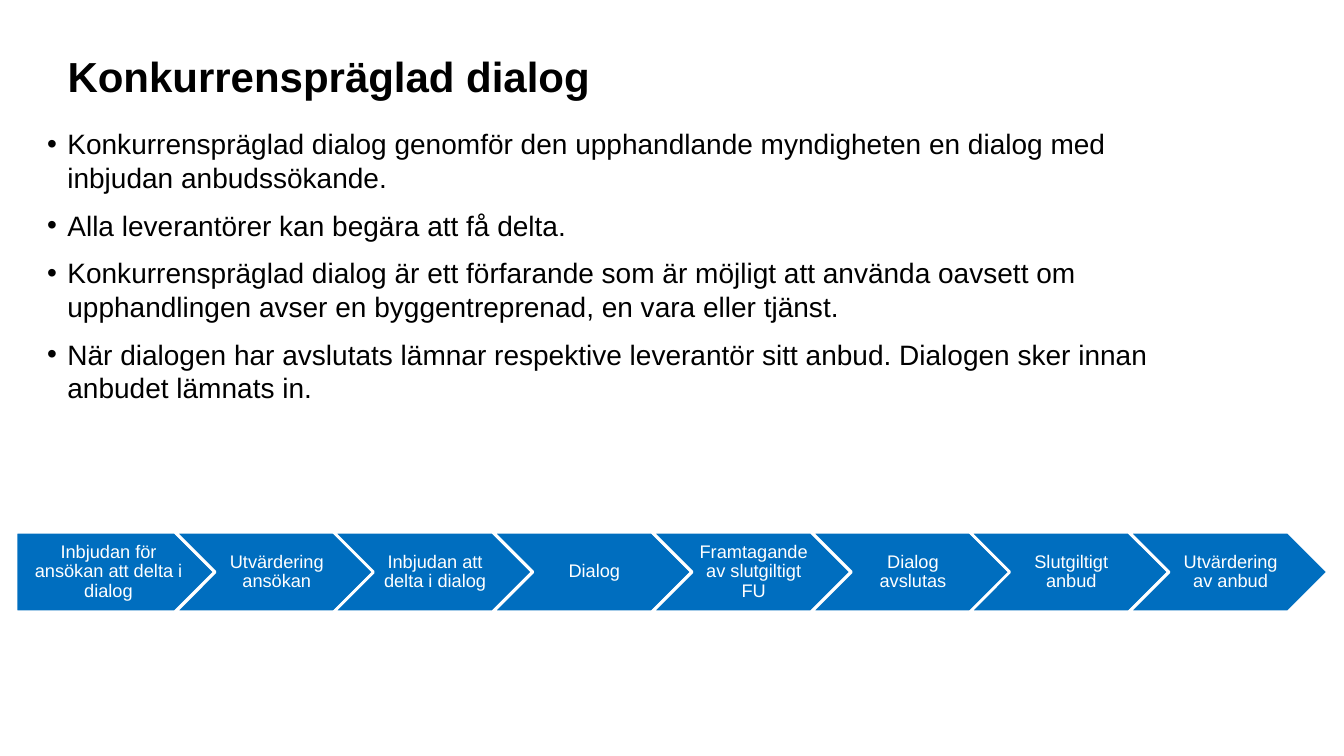
from lxml import etree
from pptx import Presentation
from pptx.dml.color import RGBColor
from pptx.enum.shapes import MSO_SHAPE
from pptx.enum.text import MSO_ANCHOR, PP_ALIGN
from pptx.oxml.ns import qn
from pptx.util import Emu, Pt

PX = 9144  # EMU per px, 100 px to the inch
FONT = "Arial"
COLORS = {"text": "000000", "step": "006EBF", "white": "FFFFFF"}

TITLE = "Konkurrenspräglad dialog"
BULLETS = [
    "Konkurrenspräglad dialog genomför den upphandlande myndigheten en dialog med inbjudan anbudssökande.",
    "Alla leverantörer kan begära att få delta.",
    "Konkurrenspräglad dialog är ett förfarande som är möjligt att använda oavsett om "
    "upphandlingen avser en byggentreprenad, en vara eller tjänst.",
    "När dialogen har avslutats lämnar respektive leverantör sitt anbud. "
    "Dialogen sker innan anbudet lämnats in.",
]
STEPS = [
    "Inbjudan för ansökan att delta i dialog",
    "Utvärdering ansökan",
    "Inbjudan att delta i dialog",
    "Dialog",
    "Framtagande av slutgiltigt FU",
    "Dialog avslutas",
    "Slutgiltigt anbud",
    "Utvärdering av anbud",
]
FIRST_LEFT, LAST_LEFT = 16, 1120
STEP_TOP, STEP_W, STEP_H = 528, 197, 79


def px(n):
    return Emu(n * PX)


def rgb(name):
    return RGBColor.from_string(COLORS[name])


def set_margins(tf, left, top, right, bottom):
    tf.margin_left, tf.margin_top = px(left), px(top)
    tf.margin_right, tf.margin_bottom = px(right), px(bottom)


def format_runs(p, size, color, bold=False):
    for r in p.runs:
        r.font.name = FONT
        r.font.size = Pt(size)
        r.font.bold = bold
        r.font.color.rgb = rgb(color)


def add_textbox(slide, left, top, width, height):
    tf = slide.shapes.add_textbox(px(left), px(top), px(width), px(height)).text_frame
    tf.word_wrap = True
    return tf


def add_title(slide, text):
    tf = add_textbox(slide, 67, 50, 1200, 91)
    set_margins(tf, 0, 0, 0, 0)
    tf.text = text
    format_runs(tf.paragraphs[0], 30, "text", bold=True)


def add_bullets(slide, items):
    tf = add_textbox(slide, 37, 121, 1150, 325)
    for i, item in enumerate(items):
        p = tf.add_paragraph() if i else tf.paragraphs[0]
        p.text = item
        # Hanging bullet
        pPr = p._p.get_or_add_pPr()
        pPr.set("marL", str(px(20)))
        pPr.set("indent", str(px(-20)))
        etree.SubElement(pPr, qn("a:buFont")).set("typeface", FONT)
        etree.SubElement(pPr, qn("a:buChar")).set("char", "•")
        if i:
            p.space_before = Pt(4)
        p.space_after = Pt(6)
        format_runs(p, 20, "text")


def add_step(slide, preset, left, text, inset):
    sp = slide.shapes.add_shape(preset, px(left), px(STEP_TOP), px(STEP_W), px(STEP_H))
    sp.shadow.inherit = False
    sp.fill.solid()
    sp.fill.fore_color.rgb = rgb("step")
    sp.line.color.rgb = rgb("white")
    sp.line.width = Pt(2)
    tf = sp.text_frame
    tf.word_wrap = True
    tf.vertical_anchor = MSO_ANCHOR.MIDDLE
    set_margins(tf, inset, 4, 2, 4)
    tf.text = text
    p = tf.paragraphs[0]
    p.alignment = PP_ALIGN.CENTER
    p.line_spacing = 0.9
    format_runs(p, 13, "white")


def add_process(slide, steps):
    pitch = (LAST_LEFT - FIRST_LEFT) / (len(steps) - 1)
    for i, text in enumerate(steps):
        preset, inset = (MSO_SHAPE.CHEVRON, 6) if i else (MSO_SHAPE.PENTAGON, 8)
        add_step(slide, preset, FIRST_LEFT + round(i * pitch), text, inset)


def main():
    prs = Presentation()
    prs.slide_width, prs.slide_height = px(1333), px(750)
    slide = prs.slides.add_slide(prs.slide_layouts[6])
    # Heading and body text
    add_title(slide, TITLE)
    add_bullets(slide, BULLETS)
    # Process arrows along the bottom
    add_process(slide, STEPS)
    prs.save("out.pptx")


if __name__ == "__main__":
    main()
